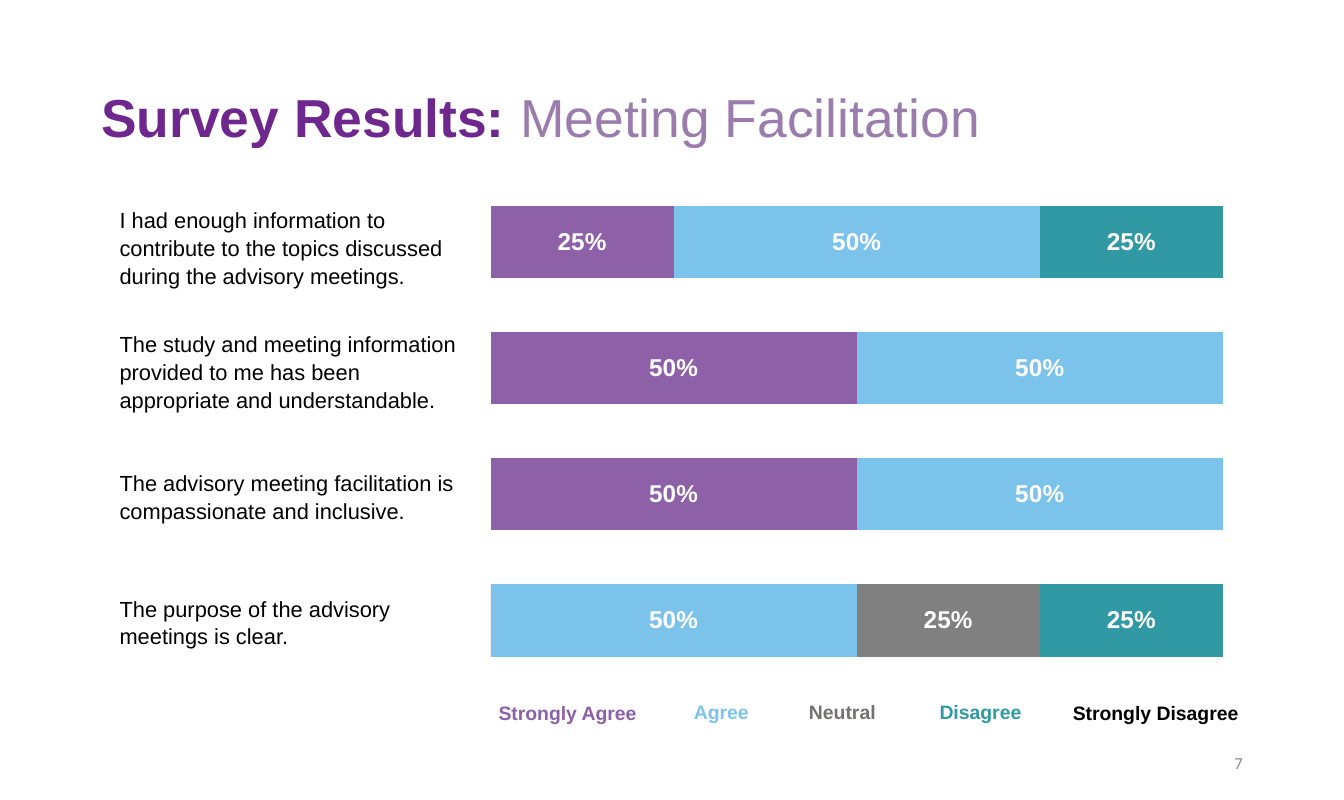
from dataclasses import dataclass

from lxml import etree
from pptx import Presentation
from pptx.chart.data import CategoryChartData
from pptx.dml.color import RGBColor
from pptx.enum.chart import XL_CHART_TYPE, XL_LABEL_POSITION
from pptx.enum.text import MSO_ANCHOR, MSO_AUTO_SIZE, PP_ALIGN
from pptx.oxml.ns import qn
from pptx.util import Inches, Pt

BAR_STACKED = XL_CHART_TYPE.BAR_STACKED
LABEL_CENTER = XL_LABEL_POSITION.CENTER
TOP, MIDDLE = MSO_ANCHOR.TOP, MSO_ANCHOR.MIDDLE
NO_FIT = MSO_AUTO_SIZE.NONE
LEFT, CENTER, RIGHT = PP_ALIGN.LEFT, PP_ALIGN.CENTER, PP_ALIGN.RIGHT

COLORS = {
    "title": "6E288D",
    "subtitle": "9A7DAC",
    "strongly agree": "8D60A8",
    "agree": "7CC3EC",
    "neutral": "808080",
    "neutral text": "767171",
    "disagree": "3099A4",
    "strongly disagree": "5B9BD5",
    "black": "000000",
    "white": "FFFFFF",
    "page number": "8C8C8C",
}


@dataclass
class TextStyle:
    size: float
    color: str
    bold: bool = False
    font: str = "Arial"


@dataclass
class Label:
    text: str
    left: float
    top: float
    width: float
    height: float
    style: TextStyle
    alignment: PP_ALIGN = LEFT
    anchor: MSO_ANCHOR = TOP
    line_spacing: float = 1.06


@dataclass
class Answer:
    name: str
    color: str
    shares: tuple[float, ...]


STATEMENT = TextStyle(18, "black")
STATEMENTS = [
    Label(text, 1.27, top, 4.17, height, STATEMENT)
    for text, top, height in (
        ("I had enough information to contribute to the topics discussed "
         "during the advisory meetings.", 2.3, 1.01),
        ("The study and meeting information provided to me has been "
         "appropriate and understandable.", 3.72, 1.01),
        ("The advisory meeting facilitation is compassionate and inclusive.", 5.31, 0.71),
        ("The purpose of the advisory meetings is clear.", 6.74, 0.71),
    )
]
LEGEND = [
    Label(text, left, top, width, 0.37, TextStyle(16, color, True), CENTER)
    for text, left, top, width, color in (
        ("Strongly Agree", 5.59, 7.95, 1.81, "strongly agree"),
        ("Agree", 7.82, 7.94, 0.87, "agree"),
        ("Neutral", 9.11, 7.94, 1.06, "neutral text"),
        ("Disagree", 10.6, 7.94, 1.24, "disagree"),
        ("Strongly Disagree", 12.16, 7.95, 2.13, "black"),
    )
]
PAGE_NUMBER = Label("7", 10.86, 8.48, 3.46, 0.49,
                    TextStyle(13.8, "page number", font="Calibri"), RIGHT, MIDDLE, 1.0)
ANSWERS = [
    Answer("Series 1", "strongly agree", (0, 0.5, 0.5, 0.25)),
    Answer("Series 2", "agree", (0.5, 0.5, 0.5, 0.5)),
    Answer("Series 3", "neutral", (0.25, 0, 0, 0)),
    Answer("Series 4", "disagree", (0.25, 0, 0, 0.25)),
    Answer("Series 5", "strongly disagree", (0, 0, 0, 0)),
]
PLOT_AREA = {"x": 0.02, "y": 0.02, "w": 0.96, "h": 0.96}


def style_font(font, style: TextStyle) -> None:
    """Apply a text style to the font of a run or a chart part."""
    font.name = style.font
    font.size = Pt(style.size)
    font.bold = style.bold
    font.color.rgb = RGBColor.from_string(COLORS[style.color])


def add_run(paragraph, text: str, style: TextStyle) -> None:
    """Append a styled run to a paragraph."""
    run = paragraph.add_run()
    run.text = text
    style_font(run.font, style)


def fill_title(slide) -> None:
    """Place the title placeholder and write its two runs."""
    title = slide.shapes.title
    title.left, title.top = Inches(1.06), Inches(0.49)
    title.width, title.height = Inches(13.27), Inches(1.77)
    frame = title.text_frame
    frame.auto_size = NO_FIT
    frame.vertical_anchor = MIDDLE
    paragraph = frame.paragraphs[0]
    paragraph.alignment = LEFT
    paragraph.line_spacing = 0.9
    add_run(paragraph, "Survey Results: ", TextStyle(44, "title", True))
    add_run(paragraph, "Meeting Facilitation", TextStyle(44, "subtitle"))


def add_label(slide, label: Label) -> None:
    """Add a wrapped text box for a label."""
    box = slide.shapes.add_textbox(Inches(label.left), Inches(label.top),
                                   Inches(label.width), Inches(label.height))
    frame = box.text_frame
    frame.word_wrap = True
    frame.vertical_anchor = label.anchor
    paragraph = frame.paragraphs[0]
    paragraph.alignment = label.alignment
    paragraph.line_spacing = label.line_spacing
    add_run(paragraph, label.text, label.style)


def set_plot_layout(chart) -> None:
    """Fix the inner plot area as fractions of the chart."""
    plot_area = chart.plots[0]._element.getparent()
    for old_layout in plot_area.findall(qn("c:layout")):
        plot_area.remove(old_layout)
    layout = etree.Element(qn("c:layout"))
    plot_area.insert(0, layout)
    manual = etree.SubElement(layout, qn("c:manualLayout"))
    settings = {"layoutTarget": "inner", "xMode": "edge", "yMode": "edge", **PLOT_AREA}
    for name, value in settings.items():
        etree.SubElement(manual, qn(f"c:{name}")).set("val", str(value))


def add_survey_chart(slide) -> None:
    """Add the stacked bars with one series per answer."""
    data = CategoryChartData(number_format="0%")
    data.categories = ["1", "2", "3", "4"]
    for answer in ANSWERS:
        data.add_series(answer.name, answer.shares)
    chart = slide.shapes.add_chart(BAR_STACKED, Inches(5.44), Inches(1.93),
                                   Inches(8.73), Inches(6.01), data).chart
    label_style = TextStyle(20, "white", True)
    style_font(chart.font, label_style)
    chart.has_legend = False
    chart.has_title = False
    chart.category_axis.visible = False
    chart.value_axis.visible = False
    chart.value_axis.has_major_gridlines = False
    chart.value_axis.minimum_scale = 0
    chart.value_axis.maximum_scale = 1
    plot = chart.plots[0]
    plot.gap_width = 75
    plot.overlap = 100
    plot.vary_by_categories = False
    for series, answer in zip(plot.series, ANSWERS):
        series.format.fill.solid()
        series.format.fill.fore_color.rgb = RGBColor.from_string(COLORS[answer.color])
        if any(answer.shares):
            labels = series.data_labels
            labels.show_value = True
            labels.position = LABEL_CENTER
            labels.number_format = "0%;;"
            labels.number_format_is_linked = False
            style_font(labels.font, label_style)
    set_plot_layout(chart)


def main() -> None:
    """Build the survey slide and save it."""
    presentation = Presentation()
    presentation.slide_width = Inches(15.38)
    presentation.slide_height = Inches(9.15)
    slide = presentation.slides.add_slide(presentation.slide_layouts[5])
    fill_title(slide)
    add_survey_chart(slide)
    for label in (*STATEMENTS, *LEGEND, PAGE_NUMBER):
        add_label(slide, label)
    presentation.save("out.pptx")


if __name__ == "__main__":
    main()
